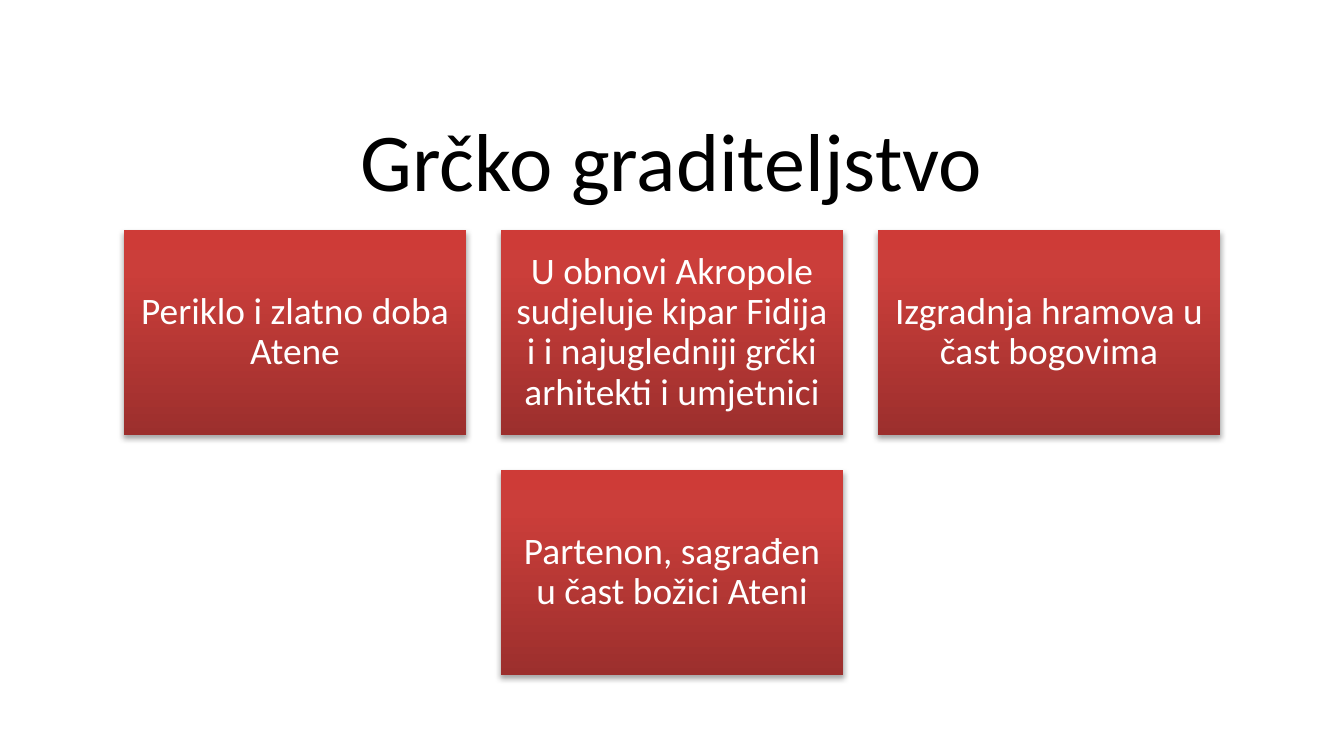
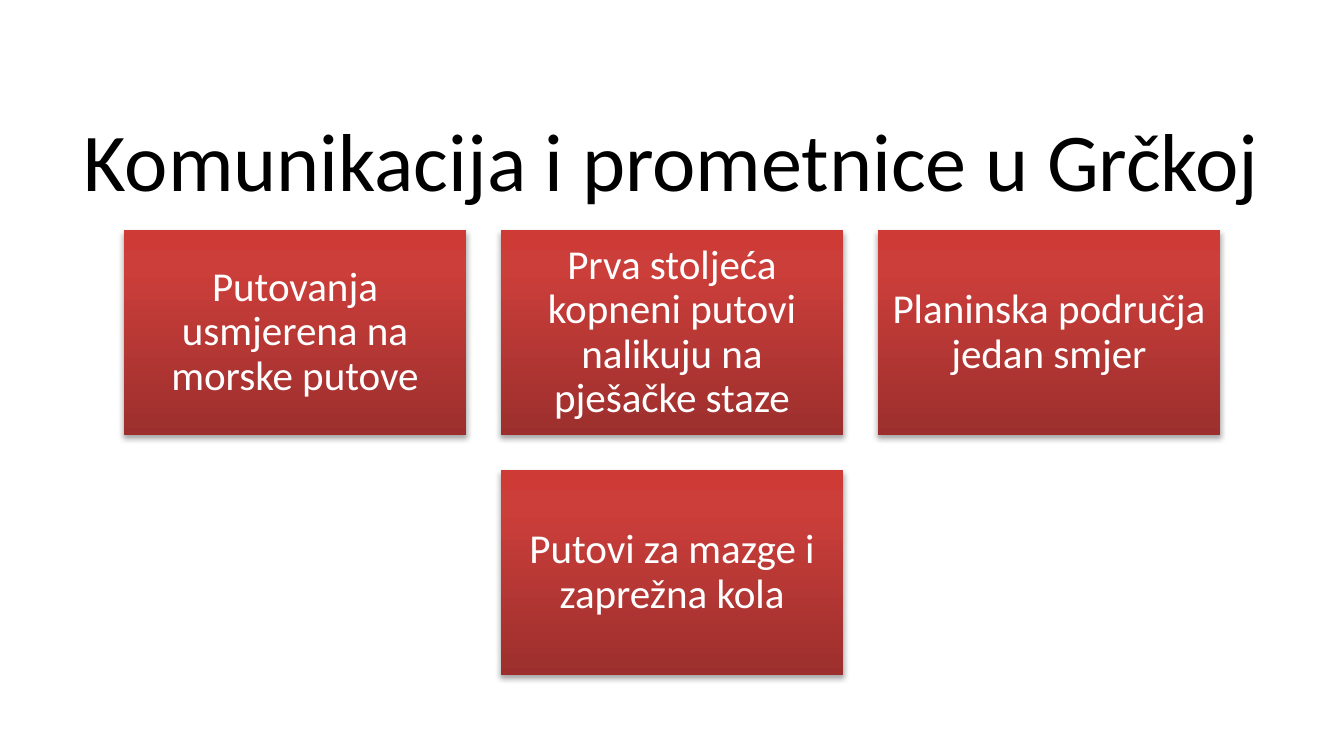
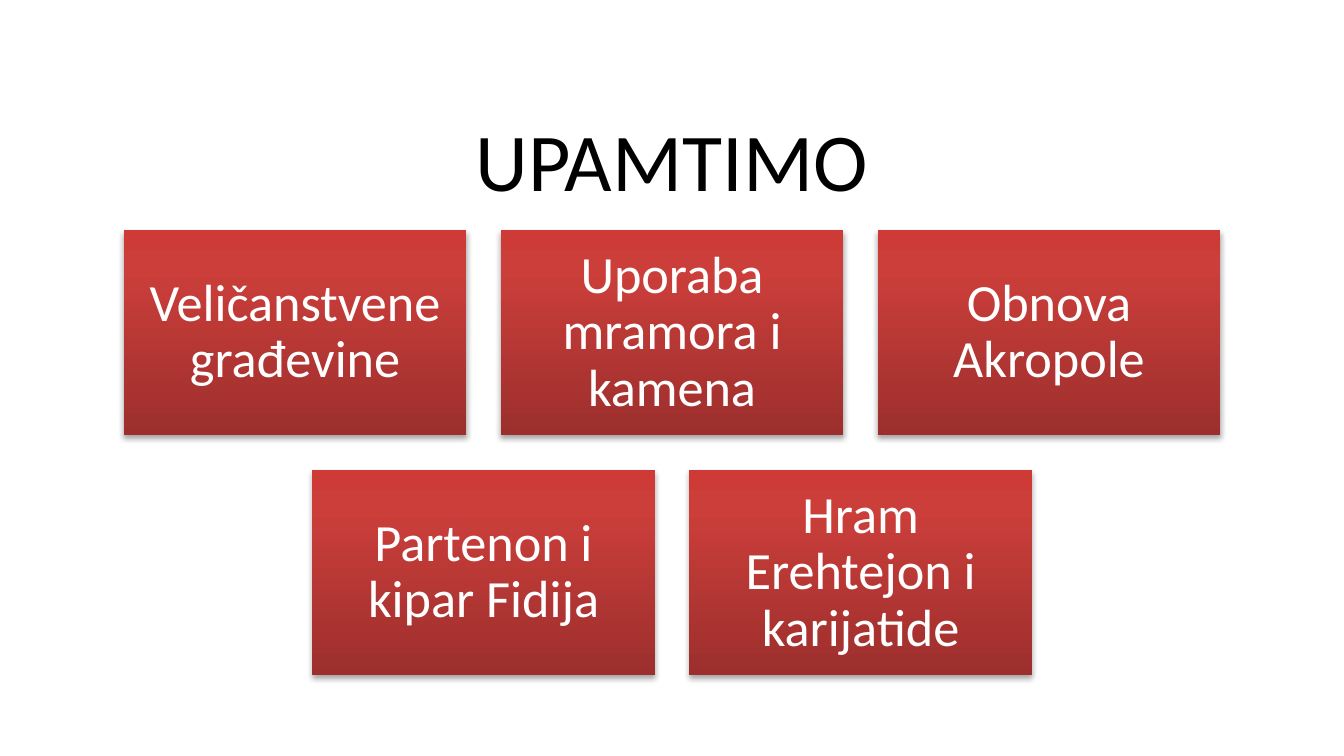
from lxml.etree import SubElement
from pptx import Presentation
from pptx.dml.color import RGBColor
from pptx.enum.shapes import MSO_SHAPE as Shape
from pptx.enum.text import MSO_ANCHOR as Anchor, MSO_AUTO_SIZE as AutoSize, PP_ALIGN as Align
from pptx.oxml.ns import qn
from pptx.util import Pt

# Shared style, lengths in points
FONT = "Calibri"
BLACK = RGBColor(0x00, 0x00, 0x00)
WHITE = RGBColor(0xFF, 0xFF, 0xFF)
DARK_RED = RGBColor(0x9C, 0x2F, 0x2D)
RED = RGBColor(0xCB, 0x3E, 0x3A)
BRIGHT_RED = RGBColor(0xCE, 0x3B, 0x37)
CARD_STOPS = ((0, DARK_RED), (80, RED), (100, BRIGHT_RED))

PAGE_WIDTH, PAGE_HEIGHT = 720, 405
TITLE_AREA = (36, 60.5, 648, 56)
CARD_WIDTH = 183.6
CARD_HEIGHT = 0.6 * CARD_WIDTH
CARD_GAP = 0.1 * CARD_WIDTH
CARDS_TOP = 123.2
CARDS_PER_ROW = 3

PAGES = [
    ("Grčko graditeljstvo", 20, [
        "Periklo i zlatno doba Atene",
        "U obnovi Akropole sudjeluje kipar Fidija i i najugledniji grčki arhitekti i umjetnici",
        "Izgradnja hramova u čast bogovima",
        "Partenon, sagrađen u čast božici Ateni",
    ]),
    ("Komunikacija i prometnice u Grčkoj", 22, [
        "Putovanja usmjerena na morske putove",
        "Prva stoljeća kopneni putovi nalikuju na pješačke staze",
        "Planinska područja jedan smjer",
        "Putovi za mazge i zaprežna kola",
    ]),
    ("UPAMTIMO", 28, [
        "Veličanstvene građevine",
        "Uporaba mramora i kamena",
        "Obnova Akropole",
        "Partenon i kipar Fidija",
        "Hram Erehtejon i karijatide",
    ]),
]


def write_text(box, text, *, size, color, inset=None):
    """Fill a box with one centred paragraph."""
    frame = box.text_frame
    frame.word_wrap = True
    frame.auto_size = AutoSize.NONE
    frame.vertical_anchor = Anchor.MIDDLE
    if inset is not None:
        frame.margin_left = frame.margin_right = Pt(inset)
        frame.margin_top = frame.margin_bottom = Pt(inset)
    para = frame.paragraphs[0]
    para.alignment = Align.CENTER
    para.line_spacing = 0.9
    span = para.add_run()
    span.text = text
    span.font.name = FONT
    span.font.size = Pt(size)
    span.font.color.rgb = color


class CardDeck:
    def __init__(self):
        self.deck = Presentation()
        self.deck.slide_width = Pt(PAGE_WIDTH)
        self.deck.slide_height = Pt(PAGE_HEIGHT)
        self.page = None

    def add_page(self, title):
        self.page = self.deck.slides.add_slide(self.deck.slide_layouts[5])
        box = self.page.shapes.title
        box.left, box.top, box.width, box.height = map(Pt, TITLE_AREA)
        write_text(box, title, size=44, color=BLACK)

    def add_card(self, text, left, top, size):
        area = map(Pt, (left, top, CARD_WIDTH, CARD_HEIGHT))
        card = self.page.shapes.add_shape(Shape.RECTANGLE, *area)
        card.line.fill.background()
        self.shade(card)
        self.drop_shadow(card)
        write_text(card, text, size=size, color=WHITE, inset=0.3 * size)

    def shade(self, card):
        # Gradient from the bottom edge to the top edge
        card.fill.gradient()
        card.fill.gradient_angle = 90
        stops = card.element.spPr.find(qn("a:gradFill")).find(qn("a:gsLst"))
        for stop in list(stops):
            stops.remove(stop)
        for percent, color in CARD_STOPS:
            stop = SubElement(stops, qn("a:gs"), pos=str(percent * 1000))
            SubElement(stop, qn("a:srgbClr"), val=str(color))

    def drop_shadow(self, card):
        card.shadow.inherit = False
        effects = card.element.spPr.find(qn("a:effectLst"))
        shadow = SubElement(effects, qn("a:outerShdw"), blurRad=str(Pt(3.1)),
                            dist=str(Pt(1.8)), dir="5400000", rotWithShape="0")
        color = SubElement(shadow, qn("a:srgbClr"), val=str(BLACK))
        SubElement(color, qn("a:alpha"), val="35000")

    def add_cards(self, texts, size):
        # Each row is centred on the page
        for first in range(0, len(texts), CARDS_PER_ROW):
            row = texts[first:first + CARDS_PER_ROW]
            row_width = len(row) * (CARD_WIDTH + CARD_GAP) - CARD_GAP
            left = (PAGE_WIDTH - row_width) / 2
            top = CARDS_TOP + first // CARDS_PER_ROW * (CARD_HEIGHT + CARD_GAP)
            for column, text in enumerate(row):
                self.add_card(text, left + column * (CARD_WIDTH + CARD_GAP), top, size)


def main():
    cards = CardDeck()
    for title, size, texts in PAGES:
        cards.add_page(title)
        cards.add_cards(texts, size)
    cards.deck.save("out.pptx")


if __name__ == "__main__":
    main()
